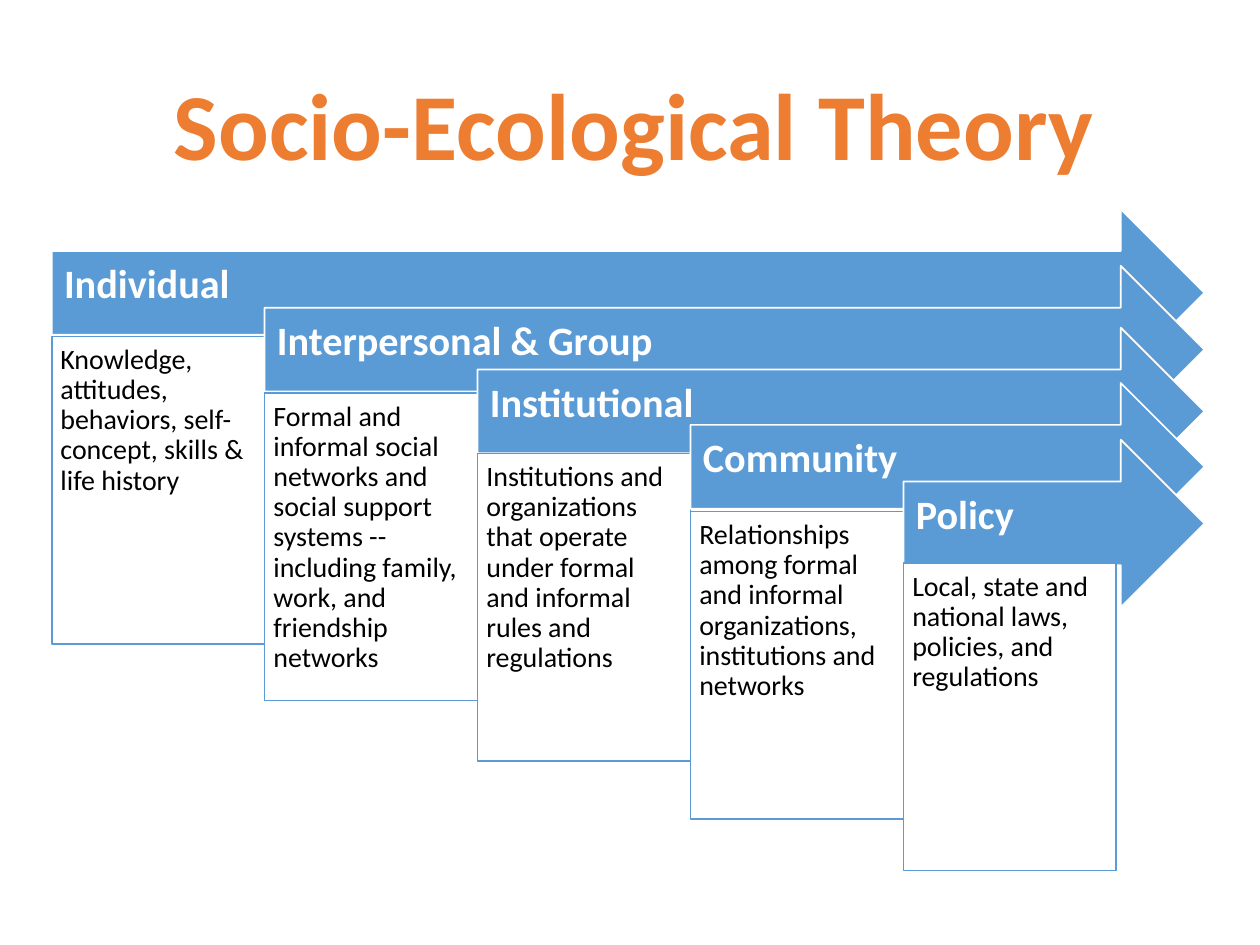
from dataclasses import dataclass

from pptx import Presentation
from pptx.dml.color import RGBColor
from pptx.enum import shapes, text
from pptx.util import Inches, Pt


@dataclass(frozen=True)
class Theme:
    font: str = "Calibri"
    accent: RGBColor = RGBColor(0xED, 0x7D, 0x31)
    blue: RGBColor = RGBColor(0x5B, 0x9B, 0xD5)
    white: RGBColor = RGBColor(0xFF, 0xFF, 0xFF)
    black: RGBColor = RGBColor(0, 0, 0)
    title_size: int = 54
    level_size: int = 23
    body_size: int = 16


THEME = Theme()

# Level, arrow top, card top, description
LEVELS = [
    ("Individual", 1.66, 2.67,
     "Knowledge, attitudes, behaviors, self-concept, skills & life history"),
    ("Interpersonal & Group", 2.11, 3.12,
     "Formal and informal social networks and social support systems -- "
     "including family, work, and friendship networks"),
    ("Institutional", 2.6, 3.6,
     "Institutions and organizations that operate under formal and informal "
     "rules and regulations"),
    ("Community", 3.04, 4.06,
     "Relationships among formal and informal organizations, institutions "
     "and networks"),
    ("Policy", 3.49, 4.47,
     "Local, state and national laws, policies, and regulations"),
]
LEFT, RIGHT = 0.41, 9.56
ARROW_HEIGHT = 1.33
CARD_WIDTH, CARD_HEIGHT = 1.69, 2.44


def write(frame, words, size, color, bold, align, anchor, insets):
    """Fill a text frame; insets are left, top, right, bottom in inches."""
    frame.word_wrap = True
    frame.auto_size = text.MSO_AUTO_SIZE.NONE
    frame.vertical_anchor = anchor
    (frame.margin_left, frame.margin_top,
     frame.margin_right, frame.margin_bottom) = map(Inches, insets)
    paragraph = frame.paragraphs[0]
    paragraph.text = words
    paragraph.alignment = align
    paragraph.line_spacing = 0.9
    font = paragraph.font
    font.name, font.size, font.bold = THEME.font, Pt(size), bold
    font.color.rgb = color


def add_panel(slide, preset, box, fill, line):
    panel = slide.shapes.add_shape(preset, *map(Inches, box))
    panel.shadow.inherit = False
    panel.fill.solid()
    panel.fill.fore_color.rgb = fill
    panel.line.color.rgb = line
    panel.line.width = Pt(1)
    return panel


def place_title(slide, box, words):
    title = slide.shapes.title
    title.left, title.top, title.width, title.height = map(Inches, box)
    write(title.text_frame, words, THEME.title_size, THEME.accent, True,
          text.PP_ALIGN.CENTER, text.MSO_ANCHOR.MIDDLE, (0.1, 0.05, 0.1, 0.05))


def add_level_arrow(slide, box, level):
    arrow = add_panel(slide, shapes.MSO_SHAPE.RIGHT_ARROW, box,
                      THEME.blue, THEME.white)
    write(arrow.text_frame, level, THEME.level_size, THEME.white, True,
          text.PP_ALIGN.LEFT, text.MSO_ANCHOR.MIDDLE, (0.1, 0.1, 0.28, 0.21))


def add_description_card(slide, box, description):
    card = add_panel(slide, shapes.MSO_SHAPE.RECTANGLE, box,
                     THEME.white, THEME.blue)
    write(card.text_frame, description, THEME.body_size, THEME.black, False,
          text.PP_ALIGN.LEFT, text.MSO_ANCHOR.TOP, (0.07,) * 4)


def main():
    deck = Presentation()
    deck.slide_width, deck.slide_height = Inches(10), Inches(7.5)
    slide = deck.slides.add_slide(deck.slide_layouts.get_by_name("Title Only"))
    place_title(slide, (0.5, 0.5, 9.06, 1.06), "Socio-Ecological Theory")
    for step, (level, arrow_top, card_top, description) in enumerate(LEVELS):
        left = LEFT + step * CARD_WIDTH
        add_level_arrow(slide, (left, arrow_top, RIGHT - left, ARROW_HEIGHT), level)
        add_description_card(
            slide, (left, card_top, CARD_WIDTH, CARD_HEIGHT), description)
    deck.save("out.pptx")


if __name__ == "__main__":
    main()
